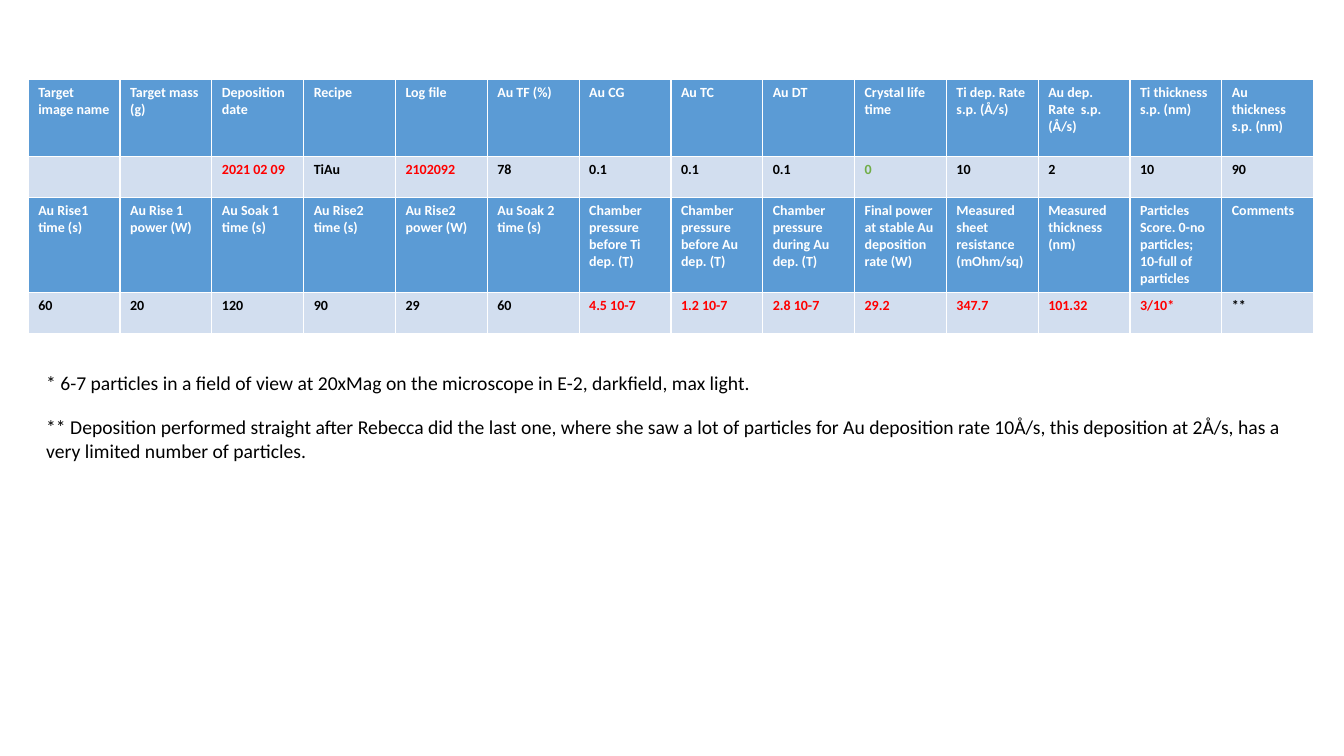
from typing import NamedTuple

from pptx import Presentation
from pptx.dml.color import RGBColor
from pptx.enum.text import MSO_AUTO_SIZE as Fit
from pptx.util import Inches, Pt

WHITE = RGBColor(0xFF, 0xFF, 0xFF)
BLACK = RGBColor(0x00, 0x00, 0x00)
RED = RGBColor(0xFF, 0x00, 0x00)
GREEN = RGBColor(0x70, 0xAD, 0x47)
BLUE = RGBColor(0x5B, 0x9B, 0xD5)
PALE = RGBColor(0xD2, 0xDE, 0xEF)
FONT = "Calibri"
LEFT, WIDTH, ROW = 0.28, 12.75, 0.41


class Grid(NamedTuple):
    top: float
    head: float
    names: list[str]
    values: list[str]
    hues: dict[int, RGBColor]


class Note(NamedTuple):
    top: float
    width: float
    height: float
    wrap: bool
    text: str


GRIDS = [
    Grid(
        0.79, 0.76,
        ["Target image name", "Target mass (g)", "Deposition date", "Recipe",
         "Log file", "Au TF (%)", "Au CG", "Au TC", "Au DT",
         "Crystal life time", "Ti dep. Rate s.p. (Å/s)",
         "Au dep. Rate  s.p. (Å/s)", "Ti thickness s.p. (nm)",
         "Au thickness s.p. (nm)"],
        ["", "", "2021 02 09", "TiAu", "2102092", "78", "0.1", "0.1", "0.1",
         "0", "10", "2", "10", "90"],
        {2: RED, 4: RED, 9: GREEN},
    ),
    Grid(
        1.96, 0.94,
        ["Au Rise1 time (s)", "Au Rise 1 power (W)", "Au Soak 1 time (s)",
         "Au Rise2 time (s)", "Au Rise2 power (W)", "Au Soak 2 time (s)",
         "Chamber pressure before Ti dep. (T)",
         "Chamber pressure before Au dep. (T)",
         "Chamber pressure during Au dep. (T)",
         "Final power at stable Au deposition rate (W)",
         "Measured sheet resistance (mOhm/sq)", "Measured thickness (nm)",
         "Particles\nScore. 0-no particles; 10-full of particles",
         "Comments"],
        ["60", "20", "120", "90", "29", "60", "4.5 10-7", "1.2 10-7",
         "2.8 10-7", "29.2", "347.7", "101.32", "3/10*", "**"],
        dict.fromkeys(range(6, 13), RED),
    ),
]

NOTES = [
    Note(3.63, 7.26, 0.64, False,
         "* 6-7 particles in a field of view at 20xMag on the microscope "
         "in E-2, darkfield, max light."),
    Note(4.07, 12.68, 0.88, True,
         "** Deposition performed straight after Rebecca did the last one, "
         "where she saw a lot of particles for Au deposition rate 10Å/s, "
         "this deposition at 2Å/s, has a very limited number of particles."),
]


def write(frame, text: str, size: int, hue: RGBColor, bold: bool) -> None:
    frame.text = text
    for para in frame.paragraphs:
        for run in para.runs:
            font = run.font
            font.name, font.size, font.bold = FONT, Pt(size), bold
            font.color.rgb = hue


def fill_cell(cell, text: str, back: RGBColor, hue: RGBColor) -> None:
    cell.fill.solid()
    cell.fill.fore_color.rgb = back
    write(cell.text_frame, text, 10, hue, True)


def add_grid(slide, grid: Grid) -> None:
    """Add a header row and a value row; the table style gives the borders."""
    table = slide.shapes.add_table(
        2, len(grid.names), Inches(LEFT), Inches(grid.top),
        Inches(WIDTH), Inches(grid.head + ROW)).table
    table.rows[0].height = Inches(grid.head)
    table.rows[1].height = Inches(ROW)
    for col, (name, value) in enumerate(zip(grid.names, grid.values)):
        fill_cell(table.cell(0, col), name, BLUE, WHITE)
        fill_cell(table.cell(1, col), value, PALE, grid.hues.get(col, BLACK))


def add_note(slide, note: Note) -> None:
    frame = slide.shapes.add_textbox(
        Inches(0.36), Inches(note.top),
        Inches(note.width), Inches(note.height)).text_frame
    frame.word_wrap = note.wrap
    frame.auto_size = Fit.SHAPE_TO_FIT_TEXT
    write(frame, note.text, 14, BLACK, False)


def main() -> None:
    deck = Presentation()
    deck.slide_width, deck.slide_height = Inches(13.33), Inches(7.5)
    slide = deck.slides.add_slide(deck.slide_layouts[6])
    for grid in GRIDS:
        add_grid(slide, grid)
    for note in NOTES:
        add_note(slide, note)
    deck.save("out.pptx")


if __name__ == "__main__":
    main()
